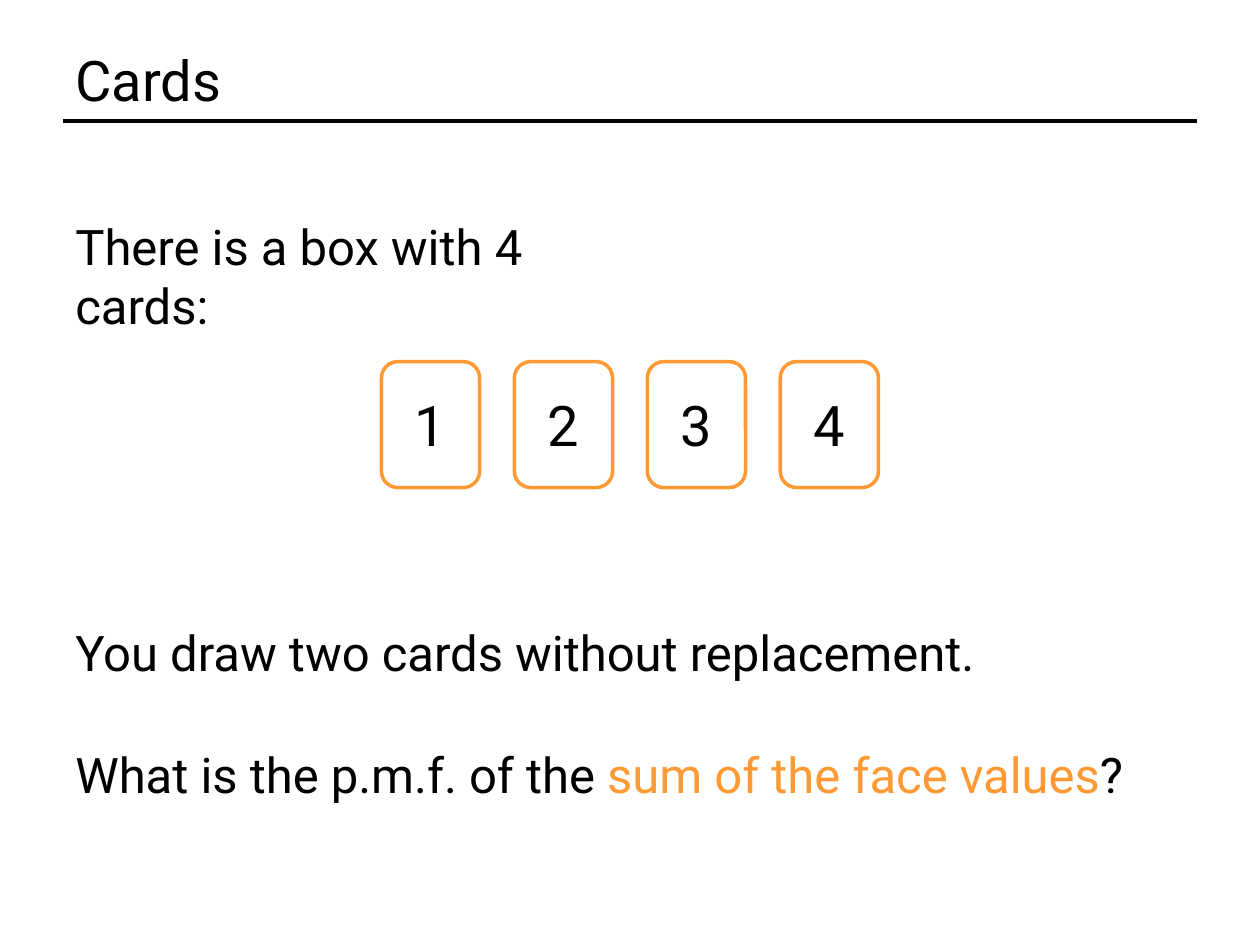
from lxml import etree
from pptx import Presentation
from pptx.dml.color import RGBColor
from pptx.enum.shapes import MSO_CONNECTOR, MSO_SHAPE
from pptx.enum.text import MSO_ANCHOR, MSO_AUTO_SIZE, PP_ALIGN
from pptx.oxml.ns import qn
from pptx.util import Cm, Pt

STRAIGHT = MSO_CONNECTOR.STRAIGHT
ROUNDED = MSO_SHAPE.ROUNDED_RECTANGLE
MIDDLE = MSO_ANCHOR.MIDDLE
TOP = MSO_ANCHOR.TOP
GROW = MSO_AUTO_SIZE.SHAPE_TO_FIT_TEXT
FIXED = MSO_AUTO_SIZE.NONE
CENTER = PP_ALIGN.CENTER

BLACK = RGBColor(0x00, 0x00, 0x00)
ORANGE = RGBColor(0xFF, 0x99, 0x33)

SLIDE_WIDTH, SLIDE_HEIGHT = Cm(25.4), Cm(19.05)
MARGIN = Cm(1.27)
CONTENT_WIDTH = SLIDE_WIDTH - 2 * MARGIN
CARD_WIDTH, CARD_HEIGHT = Cm(1.98), Cm(2.54)
CARD_TOP, CARD_GAP = Cm(7.29), Cm(0.7)

LARGE = {"name": "Roboto", "size": Pt(32)}
BODY = {"name": "Roboto", "size": Pt(28)}


def apply(target, values):
    for attribute, value in values.items():
        setattr(target, attribute, value)


def add_run(paragraph, text, font, color=BLACK):
    run = paragraph.add_run()
    run.text = text
    apply(run.font, font)
    run.font.color.rgb = color


def add_text(slide, top, width, height, parts, font, frame_format):
    box = slide.shapes.add_textbox(MARGIN, top, width, height)
    apply(box.text_frame, {"word_wrap": True, **frame_format})
    for text, color in parts:
        add_run(box.text_frame.paragraphs[0], text, font, color)


def add_title(slide, text):
    add_text(slide, Cm(0.76), CONTENT_WIDTH, Cm(1.68), [(text, BLACK)],
             LARGE, {"vertical_anchor": MIDDLE, "auto_size": FIXED})


def add_statement(slide, top, parts, width=CONTENT_WIDTH):
    add_text(slide, top, width, Cm(1.45), parts,
             BODY, {"vertical_anchor": TOP, "auto_size": GROW})


def add_rule(slide, y):
    rule = slide.shapes.add_connector(
        STRAIGHT, MARGIN, y, SLIDE_WIDTH - MARGIN, y)
    rule.line.color.rgb = BLACK
    rule.line.width = Pt(2)
    etree.SubElement(rule._element.spPr, qn("a:effectLst"))


def add_card(slide, left, face_value):
    card = slide.shapes.add_shape(
        ROUNDED, left, CARD_TOP, CARD_WIDTH, CARD_HEIGHT)
    card.shadow.inherit = False
    card.fill.background()
    card.line.color.rgb = ORANGE
    card.line.width = Pt(2)
    card.text_frame.vertical_anchor = MIDDLE
    paragraph = card.text_frame.paragraphs[0]
    paragraph.alignment = CENTER
    add_run(paragraph, str(face_value), LARGE)


def add_card_row(slide, face_values):
    pitch = CARD_WIDTH + CARD_GAP
    row_width = len(face_values) * pitch - CARD_GAP
    row_left = (SLIDE_WIDTH - row_width) // 2
    for index, face_value in enumerate(face_values):
        add_card(slide, row_left + index * pitch, face_value)


def main():
    presentation = Presentation()
    presentation.slide_width = SLIDE_WIDTH
    presentation.slide_height = SLIDE_HEIGHT
    slide = presentation.slides.add_slide(presentation.slide_layouts[6])

    add_rule(slide, Cm(2.44))
    add_title(slide, "Cards")
    add_statement(slide, Cm(4.24), [("There is a box with 4 cards:", BLACK)],
                  Cm(12.19))
    add_card_row(slide, [1, 2, 3, 4])
    add_statement(slide, Cm(12.42),
                  [("You draw two cards without replacement.", BLACK)])
    add_statement(slide, Cm(14.88), [
        ("What is the p.m.f. of the ", BLACK),
        ("sum of the face values", ORANGE),
        ("?", BLACK),
    ])

    presentation.save("out.pptx")


if __name__ == "__main__":
    main()
